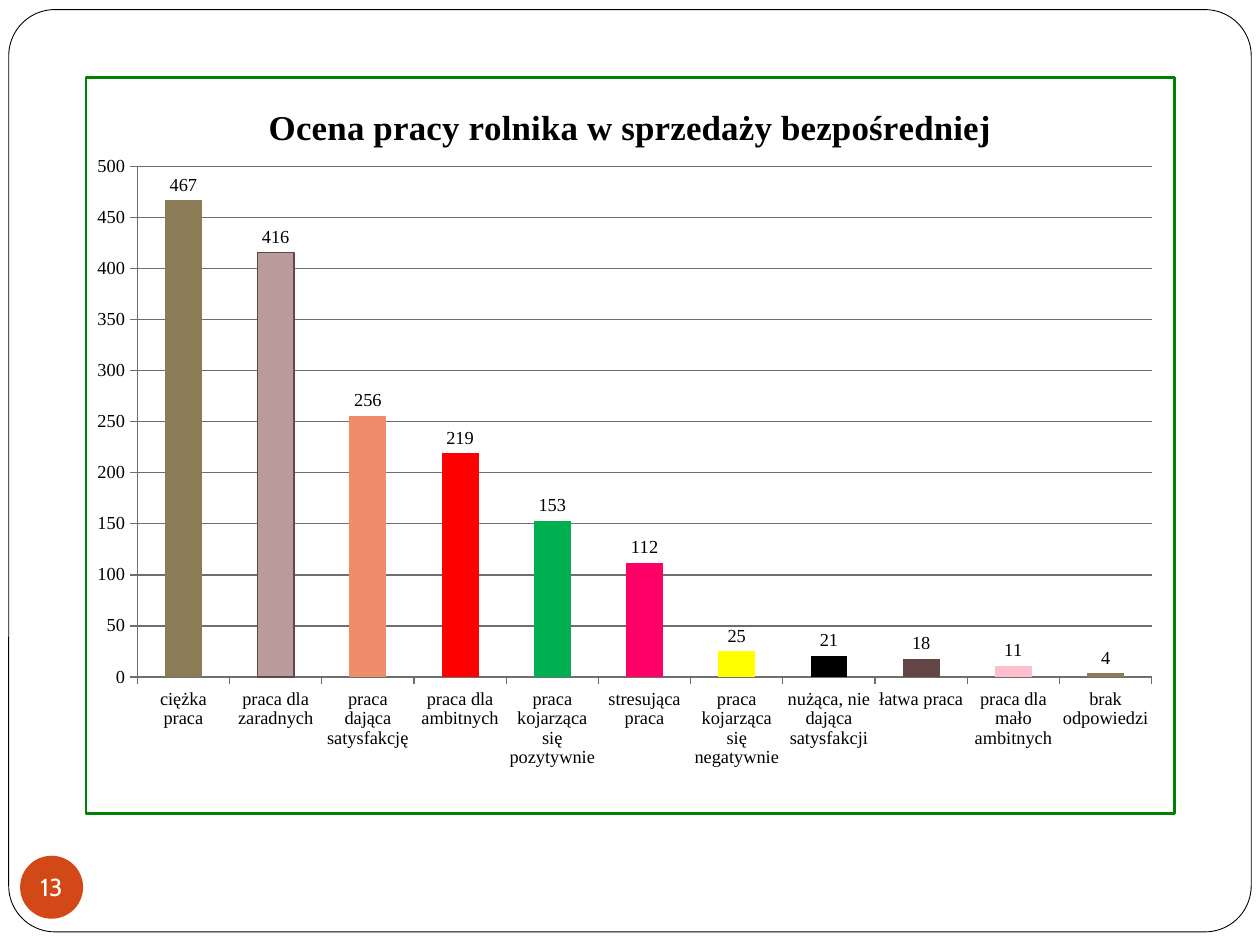
from lxml import etree
from pptx import Presentation
from pptx.chart.data import CategoryChartData
from pptx.dml.color import RGBColor
from pptx.enum.chart import XL_CHART_TYPE, XL_LABEL_POSITION, XL_TICK_MARK
from pptx.enum.shapes import MSO_SHAPE
from pptx.enum.text import MSO_ANCHOR, PP_ALIGN
from pptx.oxml import parse_xml
from pptx.oxml.ns import nsdecls, qn
from pptx.util import Pt


def color(value):
    return RGBColor.from_string(value)


ratings = [
    ("ciężka praca", 467, "8B7B57"),
    ("praca dla zaradnych", 416, "B99B9B"),
    ("praca dająca satysfakcję", 256, "EF8C6A"),
    ("praca dla ambitnych", 219, "FF0000"),
    ("praca kojarząca się pozytywnie ", 153, "00B050"),
    ("stresująca praca", 112, "FF0066"),
    ("praca kojarząca się negatywnie", 25, "FFFF00"),
    ("nużąca, nie dająca satysfakcji", 21, "000000"),
    ("łatwa praca", 18, "644646"),
    ("praca dla mało ambitnych", 11, "FEBECD"),
    ("brak odpowiedzi", 4, "8B7B57"),
]
heading = "Ocena pracy rolnika w sprzedaży bezpośredniej"

prs = Presentation()
prs.slide_width, prs.slide_height = Pt(720), Pt(540)
slide = prs.slides.add_slide(prs.slide_layouts[6])

frame = slide.shapes.add_shape(MSO_SHAPE.ROUNDED_RECTANGLE, Pt(5), Pt(5.5), Pt(710), Pt(527))
frame.adjustments[0] = 0.05
frame.shadow.inherit = False
frame.fill.solid()
frame.fill.fore_color.rgb = color("FFFFFF")
frame.line.color.rgb = color("000000")
frame.line.width = Pt(0.5)

page_badge = slide.shapes.add_shape(MSO_SHAPE.OVAL, Pt(11.5), Pt(489), Pt(36), Pt(36))
page_badge.shadow.inherit = False
page_badge.fill.solid()
page_badge.fill.fore_color.rgb = color("D34817")
page_badge.line.fill.background()
page_number = page_badge.text_frame
page_number.margin_left = page_number.margin_right = 0
page_number.margin_top = page_number.margin_bottom = 0
page_number.word_wrap = False
page_number.vertical_anchor = MSO_ANCHOR.MIDDLE
page_number.text = "13"
page_number.paragraphs[0].alignment = PP_ALIGN.CENTER
number_font = page_number.paragraphs[0].runs[0].font
number_font.size = Pt(14)
number_font.name = "Cabin"
number_font.color.rgb = color("FFFFFF")

survey = CategoryChartData()
survey.categories = [answer for answer, count, bar_color in ratings]
survey.add_series(heading, [count for answer, count, bar_color in ratings])
chart = slide.shapes.add_chart(
    XL_CHART_TYPE.COLUMN_CLUSTERED, Pt(48.5), Pt(43.5), Pt(623.5), Pt(422), survey
).chart
chart.has_legend = False
chart.font.name = "Times New Roman"
chart.font.size = Pt(10.5)
chart.font.color.rgb = color("000000")

chart.has_title = True
chart.chart_title.include_in_layout = False
chart.chart_title.text_frame.text = heading
title_font = chart.chart_title.text_frame.paragraphs[0].runs[0].font
title_font.name = "Times New Roman"
title_font.size = Pt(20)
title_font.bold = True
title_font.color.rgb = color("000000")

for axis in (chart.category_axis, chart.value_axis):
    axis.major_tick_mark = XL_TICK_MARK.OUTSIDE
    axis.minor_tick_mark = XL_TICK_MARK.NONE
    axis.format.line.color.rgb = color("6E6E6E")
    axis.format.line.width = Pt(0.75)
counts_axis = chart.value_axis
counts_axis.minimum_scale = 0
counts_axis.maximum_scale = 500
counts_axis.major_unit = 50
counts_axis.has_major_gridlines = True
counts_axis.major_gridlines.format.line.color.rgb = color("6E6E6E")
counts_axis.major_gridlines.format.line.width = Pt(0.75)

plot = chart.plots[0]
plot.gap_width = 150
plot.vary_by_categories = False
plot.has_data_labels = True
plot.data_labels.show_value = True
plot.data_labels.position = XL_LABEL_POSITION.OUTSIDE_END

bars = plot.series[0]
bars.invert_if_negative = False
bars.format.fill.solid()
bars.format.fill.fore_color.rgb = color(ratings[0][2])
for index, (answer, count, bar_color) in enumerate(ratings):
    bar_fill = bars.points[index].format.fill
    bar_fill.solid()
    bar_fill.fore_color.rgb = color(bar_color)
outline = bars.points[1].format.line
outline.color.rgb = color("644646")
outline.width = Pt(0.75)

chart_xml = chart.element.find(qn("c:chart"))
chart_xml.addnext(parse_xml(
    f'<c:spPr {nsdecls("c", "a")}><a:noFill/><a:ln w="{Pt(1.5)}"><a:solidFill>'
    '<a:srgbClr val="008000"/></a:solidFill></a:ln></c:spPr>'
))
plot_area = chart_xml.find(qn("c:plotArea"))
for old_layout in plot_area.findall(qn("c:layout")):
    plot_area.remove(old_layout)
layout = etree.Element(qn("c:layout"))
plot_area.insert(0, layout)
manual = etree.SubElement(layout, qn("c:manualLayout"))
for tag, value in [
    ("layoutTarget", "inner"), ("xMode", "edge"), ("yMode", "edge"),
    ("x", "0.047"), ("y", "0.121"), ("w", "0.932"), ("h", "0.694"),
]:
    etree.SubElement(manual, qn(f"c:{tag}")).set("val", value)

prs.save("out.pptx")
